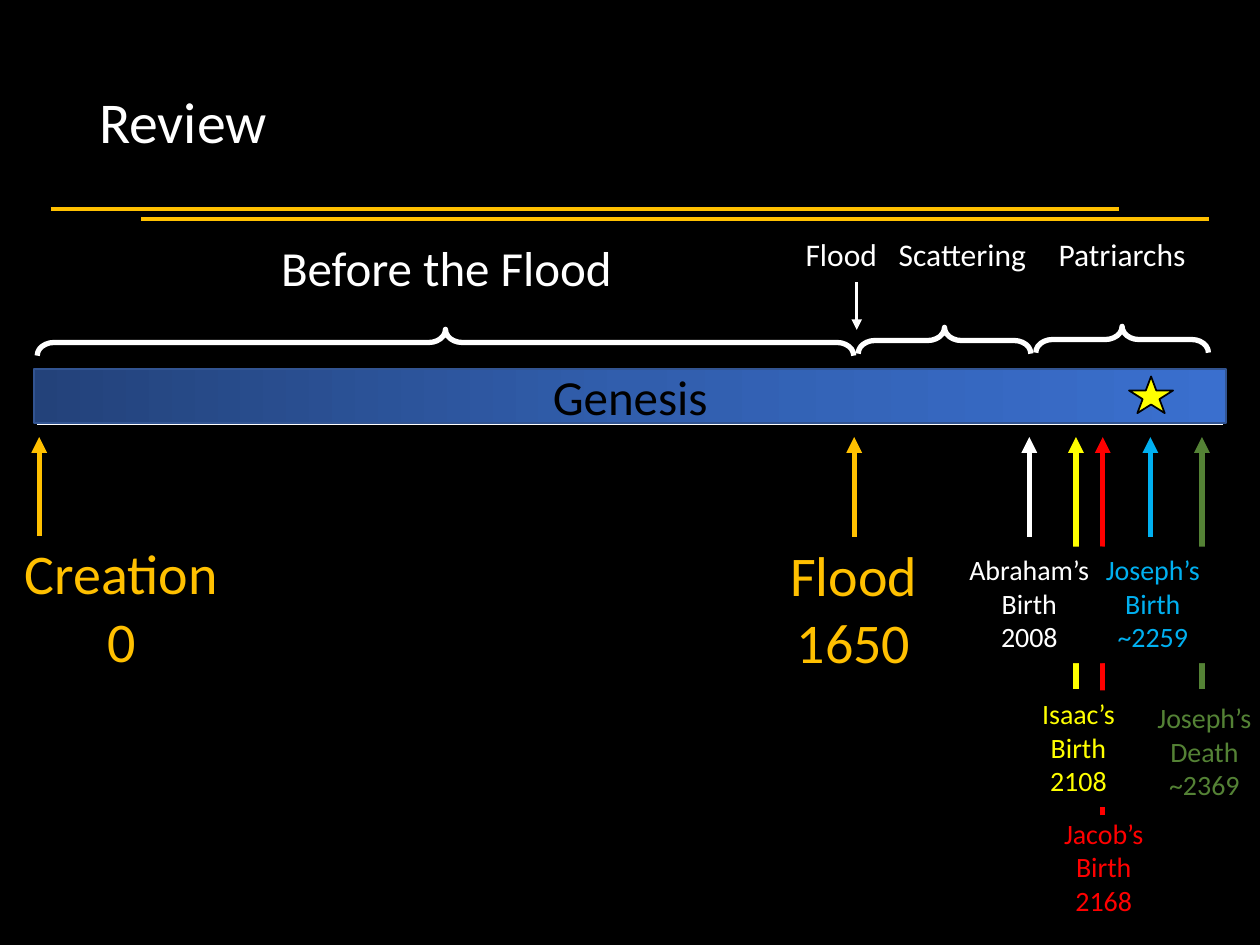
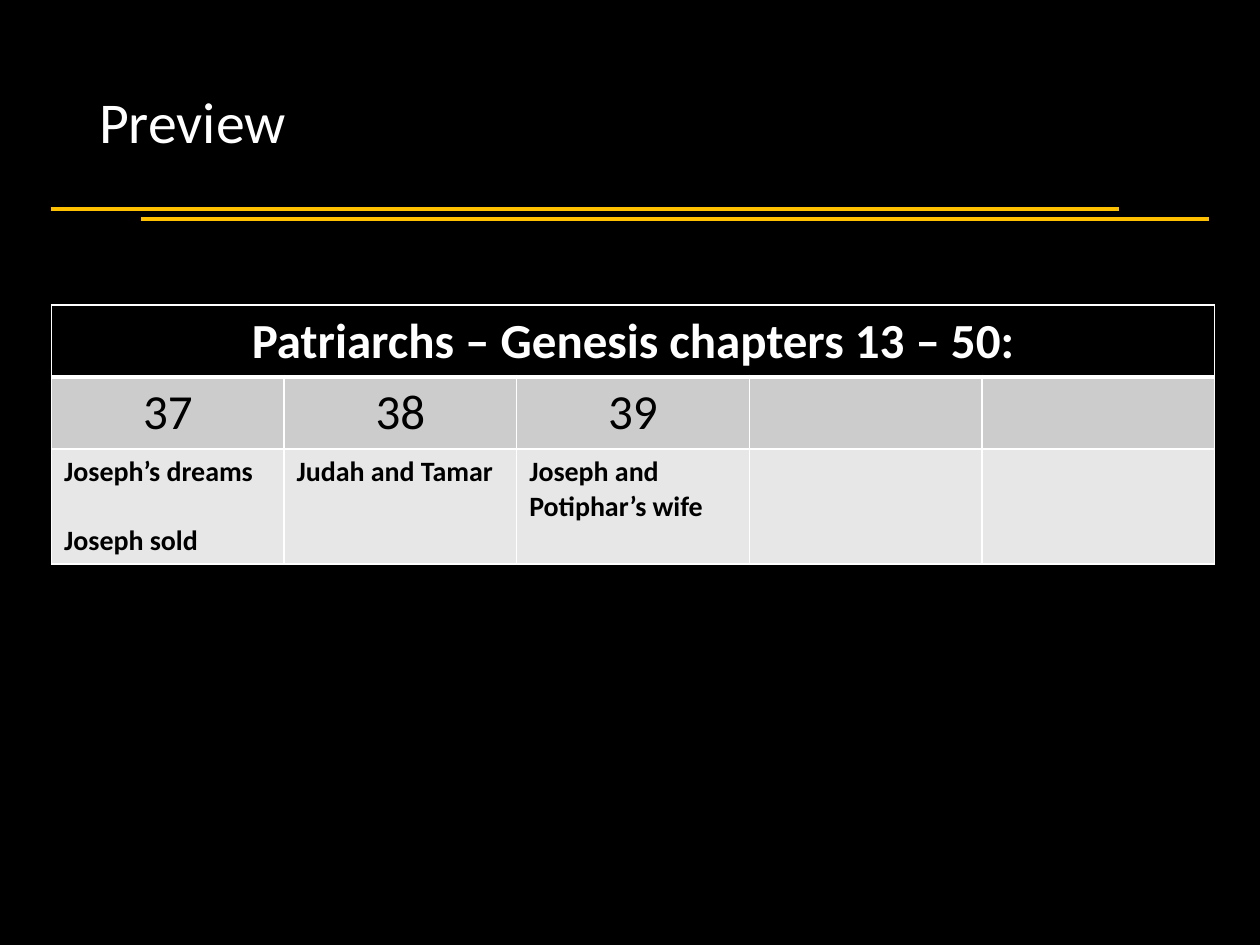
from dataclasses import dataclass

from lxml.etree import SubElement
from pptx import Presentation
from pptx.dml.color import RGBColor
from pptx.enum.shapes import MSO_CONNECTOR, MSO_SHAPE
from pptx.enum.text import MSO_ANCHOR, PP_ALIGN
from pptx.oxml.ns import qn
from pptx.util import Cm, Pt


@dataclass(frozen=True)
class Theme:
    font: str = "Calibri"
    black: str = "000000"
    white: str = "FFFFFF"
    gold: str = "FFC000"
    yellow: str = "FFFF00"
    red: str = "FF0000"
    sky: str = "00B0F0"
    green: str = "548235"
    blue: str = "4472C4"
    bar_line: str = "325491"
    bar_stops: tuple = ((0, "23427A"), (50, "315EAD"), (100, "3A6FCE"))
    chapter_fill: str = "CCCCCC"
    summary_fill: str = "E7E7E7"
    title: int = 33
    major: int = 32
    heading: int = 28
    period: int = 18
    minor: int = 16


T = Theme()

# Lengths in this section are centimetres.
TITLE_BOX = (1.75, 1.02, 21.89, 3.0)
RULES = [(1.02, 4.22), (2.84, 4.42)]  # left, top
RULE_LENGTH = 21.53

BAR_TEXT = "Genesis"
BAR_BOX = (0.69, 7.44, 24.03, 1.09)
STRIP_BOX = (0.76, 7.49, 23.9, 1.04)
STRIP_COLUMNS = 24
STAR_BOX = (22.76, 7.59, 0.89, 0.74)

# text, size, left, top, width, height
PERIODS = [
    ("Before the Flood", T.heading, 5.23, 4.67, 7.54, 1.45),
    ("Flood", T.period, 15.37, 4.62, 3.18, 1.02),
    ("Scattering", T.period, 17.81, 4.62, 3.18, 1.02),
    ("Patriarchs", T.period, 21.03, 4.62, 3.18, 1.02),
]
# left, top, span
BRACES = [(0.75, 6.64, 16.46), (17.3, 6.6, 3.48), (20.88, 6.58, 3.48)]
BRACE_DEPTH = 0.53
FLOOD_ARROW = (17.27, 5.69, 17.27, 6.65)

ARROW_TIP = 8.81
# Back to front: lines, size, colour, arrow x, arrow foot, label centre, top, fill
EVENTS = [
    (("Creation", "0"), T.major, T.gold, 0.79, 10.8, 2.45, 10.74, None),
    (("Flood", "1650"), T.major, T.gold, 17.22, 10.82, 17.21, 10.77, None),
    (("Isaac’s Birth", "2108"), T.minor, T.yellow, 21.69, 13.89, 21.74, 13.92, T.black),
    (("Jacob’s Birth", "2168"), T.minor, T.red, 22.23, 16.43, 22.25, 16.33, None),
    (("Joseph’s Death", "~2369"), T.minor, T.green, 24.23, 13.89, 24.28, 14.0, None),
    (("Joseph’s Birth", "~2259"), T.minor, T.sky, 23.19, 10.82, 23.24, 11.02, T.black),
    (("Abraham’s Birth", "2008"), T.minor, T.white, 20.75, 10.82, 20.75, 11.02, T.black),
]
LABEL_SIZE = {T.major: (4.45, 3.0), T.minor: (2.95, 2.35)}

CHAPTERS_TITLE = "Patriarchs – Genesis chapters 13 – 50:"
CHAPTERS = [
    ("37", ("Joseph’s dreams", "Joseph sold")),
    ("38", ("Judah and Tamar",)),
    ("39", ("Joseph and Potiphar’s wife",)),
    (None, ()),
    (None, ()),
]
CHAPTERS_BOX = (1.04, 6.15, 23.44, 5.22)
CHAPTER_ROWS = (1.45, 1.45, 2.32)
SUMMARY_GAP = 19.5  # points


def rgb(color):
    return RGBColor.from_string(color)


def cm(values):
    return [Cm(v) for v in values]


def write(tf, lines, size, color, align=PP_ALIGN.CENTER, bold=False, gap=0):
    tf.word_wrap = True
    tf.text = "\n".join(lines)
    for i, p in enumerate(tf.paragraphs):
        p.alignment = align
        if i and gap:
            p.space_before = Pt(gap)
        for r in p.runs:
            r.font.name, r.font.size, r.font.bold = T.font, Pt(size), bold
            r.font.color.rgb = rgb(color)


def add_text(s, box, lines, size, color, align=PP_ALIGN.CENTER, fill=None):
    sp = s.shapes.add_textbox(*cm(box))
    if fill:
        sp.fill.solid()
        sp.fill.fore_color.rgb = rgb(fill)
    write(sp.text_frame, lines, size, color, align)
    return sp


def add_line(s, ends, color, width, arrow=False):
    sp = s.shapes.add_connector(MSO_CONNECTOR.STRAIGHT, *cm(ends))
    sp.line.color.rgb = rgb(color)
    sp.line.width = Pt(width)
    if arrow:
        SubElement(sp.line._get_or_add_ln(), qn("a:tailEnd"), type="triangle")
    SubElement(sp._element.spPr, qn("a:effectLst"))


def add_preset(s, preset, box, line, width, fill=None):
    sp = s.shapes.add_shape(preset, *cm(box))
    sp.shadow.inherit = False
    sp.line.color.rgb = rgb(line)
    sp.line.width = Pt(width)
    if fill:
        sp.fill.solid()
        sp.fill.fore_color.rgb = rgb(fill)
    else:
        sp.fill.background()
    return sp


def add_brace(s, left, top, span):
    """A left brace turned a quarter so that it opens downwards."""
    box = (left + (span - BRACE_DEPTH) / 2, top - (span - BRACE_DEPTH) / 2,
           BRACE_DEPTH, span)
    sp = add_preset(s, MSO_SHAPE.LEFT_BRACE, box, T.white, 3)
    sp.adjustments[0] = 0.634
    sp.rotation = 90


def fill_gradient(sp, stops):
    sp.fill.gradient()
    sp.fill.gradient_angle = 0
    gs_list = sp._element.spPr.find(qn("a:gradFill")).find(qn("a:gsLst"))
    gs_list.clear()
    for percent, color in stops:
        gs = SubElement(gs_list, qn("a:gs"), pos=str(percent * 1000))
        SubElement(gs, qn("a:srgbClr"), val=color)


def style_cell(cell, fill, top=1, bottom=1):
    """Set white borders (widths in points) and then the fill."""
    tc_pr = cell._tc.get_or_add_tcPr()
    for side, width in zip("LRTB", (1, 1, top, bottom)):
        ln = SubElement(tc_pr, qn(f"a:ln{side}"), w=str(Pt(width)))
        SubElement(SubElement(ln, qn("a:solidFill")), qn("a:srgbClr"), val=T.white)
    cell.fill.solid()
    cell.fill.fore_color.rgb = rgb(fill)


def add_grid(s, rows, columns, box):
    tbl = s.shapes.add_table(rows, columns, *cm(box)).table
    tbl.first_row = tbl.horz_banding = False
    for column in tbl.columns:
        column.width = Cm(box[2] / columns)
    return tbl


def new_slide(prs, title):
    s = prs.slides.add_slide(prs.slide_layouts[6])
    s.background.fill.solid()
    s.background.fill.fore_color.rgb = rgb(T.black)
    for left, top in RULES:
        add_line(s, (left, top, left + RULE_LENGTH, top), T.gold, 2.25)
    tf = add_text(s, TITLE_BOX, [title], T.title, T.white, PP_ALIGN.LEFT).text_frame
    tf.vertical_anchor = MSO_ANCHOR.MIDDLE
    tf.paragraphs[0].line_spacing = 0.9
    return s


def build_review(prs):
    s = new_slide(prs, "Review")
    strip = add_grid(s, 1, STRIP_COLUMNS, STRIP_BOX)
    for cell in strip.iter_cells():
        style_cell(cell, T.blue, bottom=3)

    for _, _, color, x, foot, *_ in EVENTS:
        add_line(s, (x, foot, x, ARROW_TIP), color, 3, arrow=True)
    for lines, size, color, _, _, center, top, fill in EVENTS:
        width, height = LABEL_SIZE[size]
        add_text(s, (center - width / 2, top, width, height), lines, size, color, fill=fill)

    bar = add_preset(s, MSO_SHAPE.RECTANGLE, BAR_BOX, T.bar_line, 1)
    fill_gradient(bar, T.bar_stops)
    write(bar.text_frame, [BAR_TEXT], T.heading, T.black)
    bar.text_frame.vertical_anchor = MSO_ANCHOR.MIDDLE

    for brace in BRACES:
        add_brace(s, *brace)
    add_line(s, FLOOD_ARROW, T.white, 2, arrow=True)
    for text, size, *box in PERIODS:
        add_text(s, box, [text], size, T.white)
    add_preset(s, MSO_SHAPE.STAR_5_POINT, STAR_BOX, T.black, 1, T.yellow)


def build_preview(prs):
    s = new_slide(prs, "Preview")
    tbl = add_grid(s, len(CHAPTER_ROWS), len(CHAPTERS), CHAPTERS_BOX)
    for row, height in zip(tbl.rows, CHAPTER_ROWS):
        row.height = Cm(height)

    for c, (chapter, summary) in enumerate(CHAPTERS):
        header, number, detail = (tbl.cell(r, c) for r in range(3))
        style_cell(header, T.black, bottom=3)
        style_cell(number, T.chapter_fill, top=3)
        style_cell(detail, T.summary_fill)
        if chapter:
            write(number.text_frame, [chapter], T.heading, T.black)
            write(detail.text_frame, summary, T.minor, T.black,
                  PP_ALIGN.LEFT, bold=True, gap=SUMMARY_GAP)
    title = tbl.cell(0, 0)
    title.merge(tbl.cell(0, len(CHAPTERS) - 1))
    write(title.text_frame, [CHAPTERS_TITLE], T.heading, T.white, bold=True)


def main():
    prs = Presentation()
    prs.slide_width, prs.slide_height = Cm(25.4), Cm(19.05)
    build_review(prs)
    build_preview(prs)
    prs.save("out.pptx")


if __name__ == "__main__":
    main()
